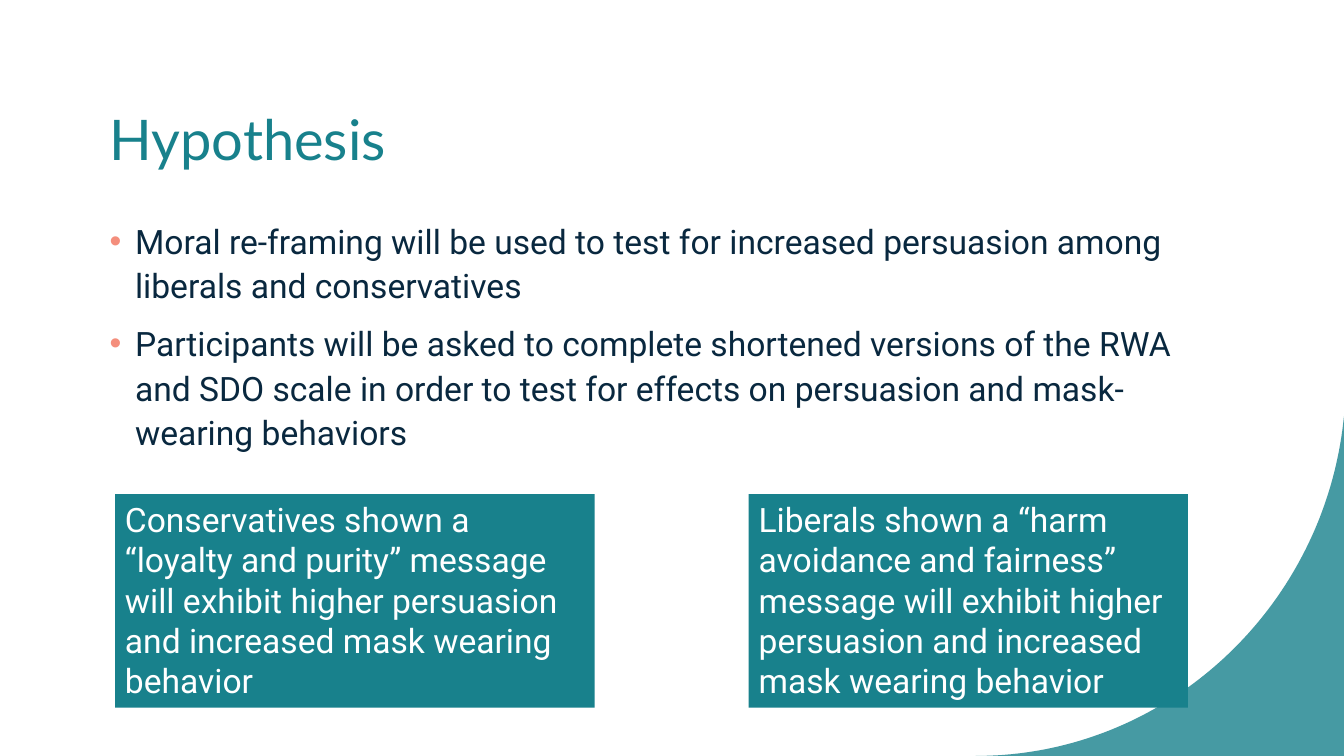
"""Build the Hypothesis slide with two bullets and two prediction boxes."""
from lxml import etree
from pptx import Presentation
from pptx.dml.color import RGBColor
from pptx.enum import shapes, text
from pptx.oxml import ns
from pptx.util import Cm, Pt

TEAL = RGBColor(0x18, 0x81, 0x8C)
NAVY = RGBColor(0x09, 0x28, 0x3F)
CORAL = RGBColor(0xF4, 0x8E, 0x7C)
WHITE = RGBColor(0xFF, 0xFF, 0xFF)

HEADING = "Hypothesis"
POINTS = [
    "Moral re-framing will be used to test for increased persuasion among liberals and conservatives",
    "Participants will be asked to complete shortened versions of the RWA and SDO scale "
    "in order to test for effects on persuasion and mask-wearing behaviors",
]
PREDICTIONS = [
    (2.9, 12.09, "Conservatives shown a “loyalty and purity” message will exhibit "
                 "higher persuasion and increased mask wearing behavior"),
    (18.87, 11.07, "Liberals shown a “harm avoidance and fairness” message will exhibit "
                   "higher persuasion and increased mask wearing behavior"),
]
WIDTH, HEIGHT = 33.87, 19.05
MARGIN, TEXT_WIDTH = 2.51, 27.53
PREDICTION_TOP, PREDICTION_HEIGHT = 12.45, 5.38
CORNER_CURVE = [(24.59, HEIGHT), (29.41, HEIGHT), (33.4, 15.29), (WIDTH, 10.49)]
CURVE_STEPS = 80


def write(paragraph, words, size=24, font="Roboto", color=NAVY, spacing=1.0, before=0):
    """Put formatted, left-aligned words in a paragraph."""
    run = paragraph.add_run()
    run.text = words
    run.font.size, run.font.name = Pt(size), font
    run.font.color.rgb = color
    paragraph.alignment = text.PP_ALIGN.LEFT
    paragraph.line_spacing, paragraph.space_before = spacing, Pt(before)


def add_bullet(paragraph):
    """Give a paragraph a coral bullet and a hanging indent."""
    props = paragraph._p.get_or_add_pPr()
    props.set("marL", str(Cm(0.64)))
    props.set("indent", str(-Cm(0.64)))
    color = etree.SubElement(props, ns.qn("a:buClr"))
    etree.SubElement(color, ns.qn("a:srgbClr"), val=str(CORAL))
    etree.SubElement(props, ns.qn("a:buFont"), typeface="Arial")
    etree.SubElement(props, ns.qn("a:buChar"), char="•")


def paint(shape, color):
    """Fill a shape flatly, without outline or shadow."""
    shape.shadow.inherit = False
    shape.fill.solid()
    shape.fill.fore_color.rgb = color
    shape.line.fill.background()


def place(shape, top, height):
    """Set a placeholder within the text margins."""
    shape.left, shape.top = Cm(MARGIN), Cm(top)
    shape.width, shape.height = Cm(TEXT_WIDTH), Cm(height)
    shape.text_frame.auto_size = text.MSO_AUTO_SIZE.NONE


def curve_point(t):
    """Return the point of the cubic corner curve at t."""
    weights = ((1 - t) ** 3, 3 * t * (1 - t) ** 2, 3 * t * t * (1 - t), t ** 3)
    return tuple(Cm(sum(w * p[axis] for w, p in zip(weights, CORNER_CURVE))) for axis in (0, 1))


def add_corner(slide):
    """Draw the translucent curved corner behind everything."""
    outline = [curve_point(step / CURVE_STEPS) for step in range(CURVE_STEPS + 1)]
    builder = slide.shapes.build_freeform(*outline[0])
    builder.add_line_segments(outline[1:] + [(Cm(WIDTH), Cm(HEIGHT))], close=True)
    corner = builder.convert_to_shape()
    paint(corner, TEAL)
    color = corner._element.spPr.find(ns.qn("a:solidFill"))[0]
    etree.SubElement(color, ns.qn("a:alpha"), val="80000")
    slide.shapes._spTree.insert(2, corner._element)


def main():
    """Assemble and save the slide."""
    deck = Presentation()
    deck.slide_width, deck.slide_height = Cm(WIDTH), Cm(HEIGHT)
    slide = deck.slides.add_slide(deck.slide_layouts[1])
    add_corner(slide)

    title, body = slide.shapes.title, slide.placeholders[1]
    place(title, 1.65, 3.68)
    write(title.text_frame.paragraphs[0], HEADING, size=40, font="Lato", color=TEAL)

    place(body, 5.33, 6.15)
    for index, point in enumerate(POINTS):
        frame = body.text_frame
        paragraph = frame.add_paragraph() if index else frame.paragraphs[0]
        write(paragraph, point, spacing=1.1, before=10)
        add_bullet(paragraph)

    for left, width, words in PREDICTIONS:
        prediction = slide.shapes.add_shape(
            shapes.MSO_SHAPE.RECTANGLE,
            Cm(left), Cm(PREDICTION_TOP), Cm(width), Cm(PREDICTION_HEIGHT))
        paint(prediction, TEAL)
        frame = prediction.text_frame
        frame.word_wrap = True
        frame.vertical_anchor = text.MSO_ANCHOR.TOP
        write(frame.paragraphs[0], words, color=WHITE)

    deck.save("out.pptx")


if __name__ == "__main__":
    main()
